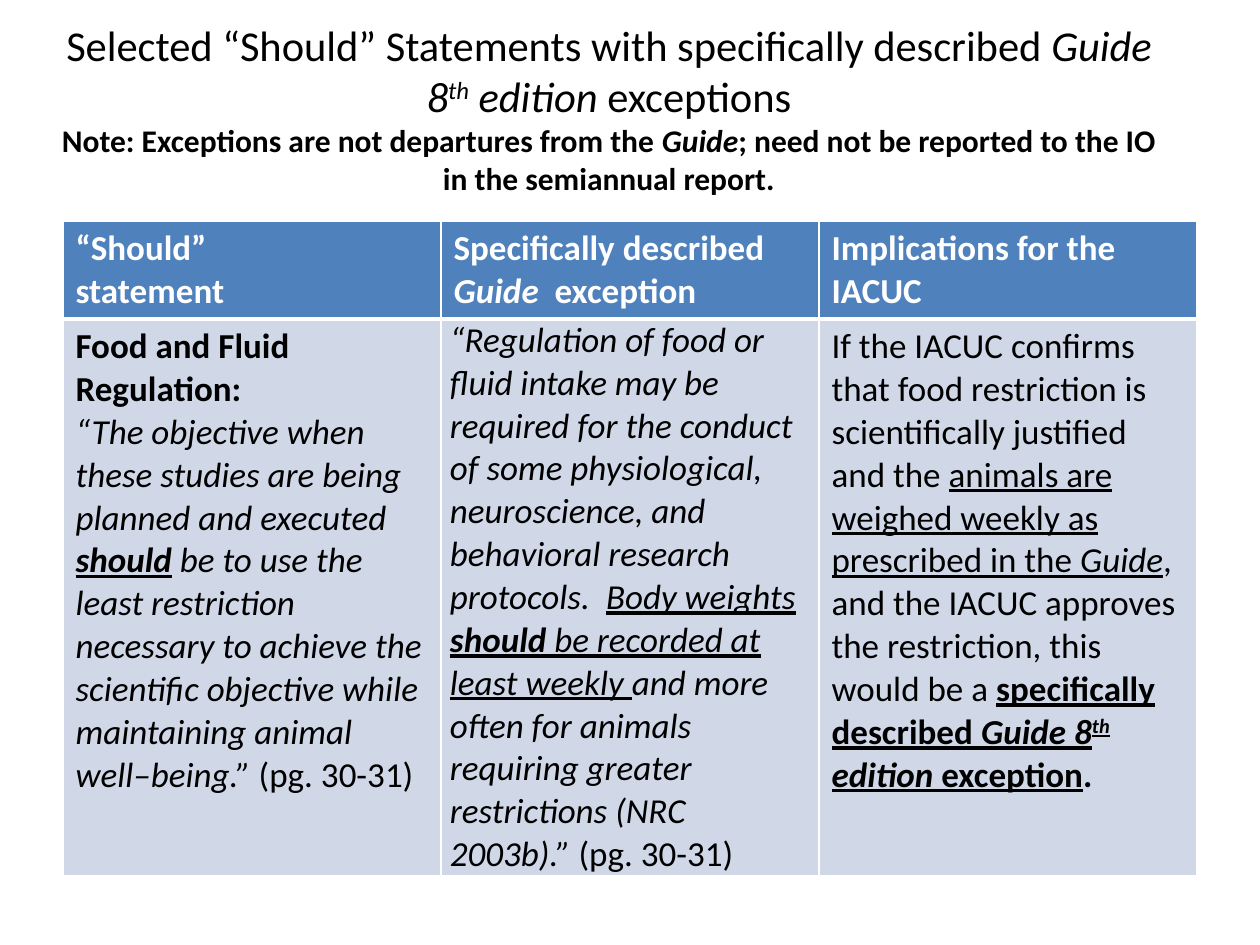
from lxml.etree import SubElement
from pptx import Presentation
from pptx.dml.color import RGBColor
from pptx.enum.text import MSO_ANCHOR, PP_ALIGN
from pptx.oxml.ns import qn
from pptx.util import Emu, Pt

WHITE, BLACK, BLUE, PALE = "FFFFFF", "000000", "4F81BD", "D0D8E8"

HEADLINE = [("Selected “Should” Statements with specifically described ", ""), ("Guide 8", "i"),
            ("th", "i^"), (" edition ", "i"), ("exceptions", "")]
NOTE = [("Note: Exceptions are not departures from the ", "b"), ("Guide", "bi"),
        ("; need not be reported to the IO in the semiannual report.", "b")]

HEADER = [
    [[("“Should”", "b")], [("statement", "b")]],
    [[("Specifically described ", "b"), ("Guide ", "bi"), (" exception", "b")]],
    [[("Implications for the IACUC", "b")]],
]
BODY = [
    [[("Food and Fluid Regulation:", "b")],
     [("“The objective when these studies are being planned and executed ", "i"),
      ("should", "biu"),
      (" be to use the least restriction necessary to achieve the scientific objective "
       "while maintaining animal well–being.” ", "i"),
      ("(pg. 30-31)", "")]],
    [[("“Regulation of food or fluid intake may be required for the conduct of some "
       "physiological, neuroscience, and behavioral research protocols.  ", "i"),
      ("Body weights ", "iu"), ("should ", "biu"), ("be recorded at least weekly ", "iu"),
      ("and more often for animals requiring greater restrictions (NRC 2003b).” ", "i"),
      ("(pg. 30-31)", "")]],
    [[("If the IACUC confirms that food restriction is scientifically justified and the ", ""),
      ("animals are weighed weekly as prescribed in the ", "u"), ("Guide", "iu"),
      (", and the IACUC approves the restriction, this would be a ", ""),
      ("specifically described ", "bu"), ("Guide 8", "biu"), ("th", "biu^"),
      (" edition", "biu"), (" exception", "bu"), (".", "b")]],
]


def px(n):
    return Emu(round(n * 914400 / 126))


def rgb(value):
    return RGBColor.from_string(value)


class Deck:
    """Holds the text style and the current slide, and adds elements to it."""

    def __init__(self, slide, font="Calibri"):
        self.slide = slide
        self.font = font

    def paragraph(self, p, runs, size, color):
        p.font.name, p.font.size = self.font, Pt(size)
        p.font.color.rgb = rgb(color)
        for text, flags in runs:
            r = p.add_run()
            r.text = text
            r.font.bold = "b" in flags
            r.font.italic = "i" in flags
            r.font.underline = "u" in flags
            if "^" in flags:
                r._r.get_or_add_rPr().set("baseline", "30000")

    def paragraphs(self, tf, items, color):
        for i, (runs, size) in enumerate(items):
            p = tf.add_paragraph() if i else tf.paragraphs[0]
            self.paragraph(p, runs, size, color)

    def title(self, x, y, w, h, items):
        tf = self.slide.shapes.add_textbox(px(x), px(y), px(w), px(h)).text_frame
        tf.word_wrap = True
        tf.margin_top = tf.margin_bottom = 0
        tf.vertical_anchor = MSO_ANCHOR.TOP
        self.paragraphs(tf, items, BLACK)
        for p in tf.paragraphs:
            p.alignment = PP_ALIGN.CENTER

    def borders(self, cell, widths):
        tcPr = cell._tc.get_or_add_tcPr()
        for side, width in zip("LRTB", widths):
            ln = SubElement(tcPr, qn(f"a:ln{side}"), w=str(Pt(width)))
            fill = SubElement(ln, qn("a:solidFill"))
            SubElement(fill, qn("a:srgbClr"), val=WHITE)

    def cell(self, cell, texts, fill, color, widths, size=20):
        self.borders(cell, widths)
        cell.fill.solid()
        cell.fill.fore_color.rgb = rgb(fill)
        self.paragraphs(cell.text_frame, [(runs, size) for runs in texts], color)

    def table(self, x, y, w, heights, rows, styles):
        table = self.slide.shapes.add_table(
            len(rows), len(rows[0]), px(x), px(y), px(w), px(sum(heights))).table
        for i, (texts, height, style) in enumerate(zip(rows, heights, styles)):
            table.rows[i].height = px(height)
            for j, text in enumerate(texts):
                self.cell(table.cell(i, j), text, *style)
        return table


def main():
    prs = Presentation()
    prs.slide_width, prs.slide_height = px(1260), px(945)
    deck = Deck(prs.slides.add_slide(prs.slide_layouts[6]))
    deck.title(42, 19, 1134, 181, [(HEADLINE, 24.3), (NOTE, 18)])
    table = deck.table(63, 221, 1134, [98, 557], [HEADER, BODY],
                       [(BLUE, WHITE, (1, 1, 1, 3)), (PALE, BLACK, (1, 1, 3, 1))])
    exception = table.cell(1, 1)
    exception.margin_left = exception.margin_right = px(9)
    exception.margin_top = exception.margin_bottom = 0
    prs.save("out.pptx")


if __name__ == "__main__":
    main()
